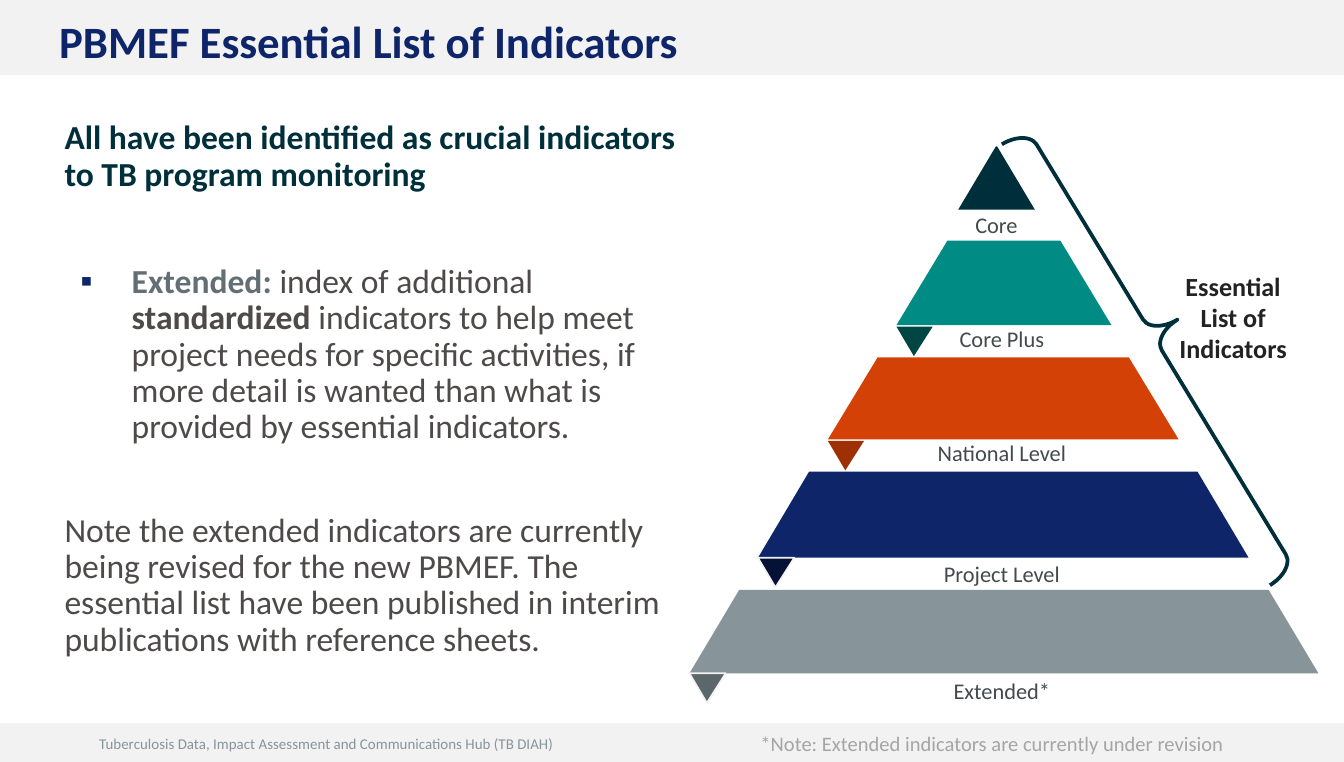
import lxml.etree
import pptx
import pptx.dml.color
import pptx.enum.shapes
import pptx.enum.text
import pptx.oxml.ns
import pptx.util

PX = 9144  # 100 px to the inch
FONT = "Calibri"

RGBColor = pptx.dml.color.RGBColor
BAND = RGBColor(0xF2, 0xF2, 0xF2)
NAVY = RGBColor(0x0E, 0x25, 0x6A)
DARK_NAVY = RGBColor(0x06, 0x12, 0x35)
INK = RGBColor(0x00, 0x2F, 0x3C)
TEAL = RGBColor(0x00, 0x8C, 0x84)
DARK_TEAL = RGBColor(0x00, 0x46, 0x42)
ORANGE = RGBColor(0xD4, 0x41, 0x06)
DARK_ORANGE = RGBColor(0x9F, 0x30, 0x04)
GREY = RGBColor(0x87, 0x94, 0x99)
DARK_GREY = RGBColor(0x5C, 0x67, 0x6C)
TERM = RGBColor(0x63, 0x6F, 0x74)
BODY = RGBColor(0x4E, 0x4A, 0x49)
LABEL = RGBColor(0x42, 0x4A, 0x4D)
NOTE = RGBColor(0xA5, 0xA5, 0xA5)
BLACK = RGBColor(0x22, 0x22, 0x22)

LEFT = pptx.enum.text.PP_ALIGN.LEFT
CENTER = pptx.enum.text.PP_ALIGN.CENTER

# label, label centre, label top, left, right, top, bottom, fill,
# fold fill, fold outline
TIERS = [
    ("Core", 741, 152, 713, 770, 109, 156, INK, None, None),
    ("Core Plus", 745, 237, 667, 827, 179, 242, TEAL, DARK_TEAL, None),
    ("National Level", 745, 322, 616, 877, 266, 327, ORANGE, DARK_ORANGE, None),
    ("Project Level", 745, 412, 564, 929, 351, 415, NAVY, DARK_NAVY, BAND),
    ("Extended*", 745, 499, 513, 981, 439, 501, GREY, DARK_GREY, BAND),
]
LABEL_WIDTH = 167

# Each paragraph: space before, bulleted, runs of (text, colour, bold)
PARAGRAPHS = [
    (0, False, [("All have been identified as crucial indicators to TB program "
                 "monitoring", INK, True)]),
    (38, True, [
        ("Extended: ", TERM, True),
        ("index of additional ", BODY, False),
        ("standardized ", BODY, True),
        ("indicators to help meet project needs for specific activities, if more "
         "detail is wanted than what is provided by essential indicators.",
         BODY, False),
    ]),
    (36, False, [("Note the extended indicators are currently being revised for "
                  "the new PBMEF. The essential list have been published in "
                  "interim publications with reference sheets.", BODY, False)]),
]


class SlideBuilder:
    def __init__(self, slide):
        self.slide = slide
        self.shapes = slide.shapes

    def add_run(self, para, text, size, color, bold=False):
        run = para.add_run()
        run.text = text
        run.font.name = FONT
        run.font.size = pptx.util.Pt(size)
        run.font.bold = bold
        run.font.color.rgb = color

    def set_indent(self, para, margin, indent=0, bullet=None):
        """Set the indents, and either a navy bullet or none."""
        props = para._p.get_or_add_pPr()
        props.set("marL", str(margin * PX))
        props.set("indent", str(indent * PX))
        qn = pptx.oxml.ns.qn
        if bullet is None:
            lxml.etree.SubElement(props, qn("a:buNone"))
            return
        color = lxml.etree.SubElement(props, qn("a:buClr"))
        lxml.etree.SubElement(color, qn("a:srgbClr")).set("val", str(NAVY))
        lxml.etree.SubElement(props, qn("a:buFont")).set("typeface", FONT)
        lxml.etree.SubElement(props, qn("a:buChar")).set("char", bullet)

    def place(self, index, left, top, width, height):
        """Move a placeholder into position, in front of what is drawn."""
        box = self.slide.placeholders[index]
        box.left, box.top = left * PX, top * PX
        box.width, box.height = width * PX, height * PX
        element = box._element
        element.getparent().append(element)
        frame = box.text_frame
        frame.word_wrap = True
        frame.auto_size = pptx.enum.text.MSO_AUTO_SIZE.NONE
        return frame

    def title(self, text, *area):
        frame = self.place(0, *area)
        frame.vertical_anchor = pptx.enum.text.MSO_ANCHOR.BOTTOM
        para = frame.paragraphs[0]
        para.alignment = LEFT
        self.add_run(para, text, 24, NAVY, True)

    def body(self, paragraphs, *area):
        frame = self.place(1, *area)
        frame.vertical_anchor = pptx.enum.text.MSO_ANCHOR.TOP
        for number, (before, bulleted, runs) in enumerate(paragraphs):
            para = frame.add_paragraph() if number else frame.paragraphs[0]
            para.line_spacing = 0.9
            para.space_before = pptx.util.Pt(before)
            if bulleted:
                self.set_indent(para, 50, -38, "▪")
            else:
                self.set_indent(para, 0)
            for text, color, bold in runs:
                self.add_run(para, text, 18, color, bold)

    def text(self, text, left, top, width, height, size, color,
             bold=False, align=LEFT, margin=0):
        box = self.shapes.add_textbox(left * PX, top * PX, width * PX, height * PX)
        box.text_frame.word_wrap = True
        para = box.text_frame.paragraphs[0]
        para.alignment = align
        self.set_indent(para, margin)
        self.add_run(para, text, size, color, bold)

    def paint(self, shape, fill, outline=None, weight=0.89):
        shape.shadow.inherit = False
        if fill is None:
            shape.fill.background()
        else:
            shape.fill.solid()
            shape.fill.fore_color.rgb = fill
        if outline is None:
            shape.line.fill.background()
        else:
            shape.line.color.rgb = outline
            shape.line.width = pptx.util.Pt(weight)

    def preset(self, kind, left, top, width, height, fill, outline=None, weight=1):
        shape = self.shapes.add_shape(
            kind, left * PX, top * PX, width * PX, height * PX)
        self.paint(shape, fill, outline, weight)
        return shape

    def band(self, top, height):
        self.preset(pptx.enum.shapes.MSO_SHAPE.RECTANGLE, 0, top, 1000, height, BAND)

    def polygon(self, points, fill, outline=None):
        builder = self.shapes.build_freeform(*points[0], scale=PX)
        builder.add_line_segments(points[1:], close=True)
        self.paint(builder.convert_to_shape(), fill, outline)

    def tier(self, left, right, top, bottom, fill):
        """Draw one pyramid layer; every side has the same slope."""
        inset = round(0.6 * (bottom - top))
        self.polygon([(left, bottom), (left + inset, top),
                      (right - inset, top), (right, bottom)], fill)

    def fold(self, left, top, fill, outline):
        self.polygon([(left, top), (left + 27, top), (left + 13, top + 22)],
                     fill, outline)

    def brace(self, left, top, width, height, rotation):
        shape = self.preset(pptx.enum.shapes.MSO_SHAPE.RIGHT_BRACE,
                            left, top, width, height, None, INK, 2)
        shape.adjustments[0] = 0.306
        shape.adjustments[1] = 0.467
        shape.rotation = rotation


def main():
    deck = pptx.Presentation()
    deck.slide_width, deck.slide_height = 1000 * PX, 567 * PX
    page = SlideBuilder(deck.slides.add_slide(deck.slide_layouts[1]))

    page.band(538, 29)
    page.text("Tuberculosis Data, Impact Assessment and Communications Hub (TB DIAH)",
              64, 542, 500, 24, 8, GREY)
    page.band(0, 56)
    page.title("PBMEF Essential List of Indicators", 34, 5, 854, 50)
    page.body(PARAGRAPHS, 38, 85, 496, 412)
    page.text("*Note: Extended indicators are currently under revision",
              518, 539, 455, 29, 11, NOTE, margin=38)

    for (label, center, label_top, left, right, top, bottom,
         fill, fold_fill, outline) in TIERS:
        page.tier(left, right, top, bottom, fill)
        if fold_fill is not None:
            page.fold(left, bottom if outline else bottom + 1, fold_fill, outline)
        page.text(label, center - LABEL_WIDTH // 2, label_top, LABEL_WIDTH, 30,
                  12, LABEL, align=CENTER)

    page.brace(842, 68, 44, 384, 328.7)
    page.text("Essential List of Indicators", 858, 196, 119, 81, 14, BLACK,
              bold=True, align=CENTER)
    deck.save("out.pptx")


if __name__ == "__main__":
    main()
